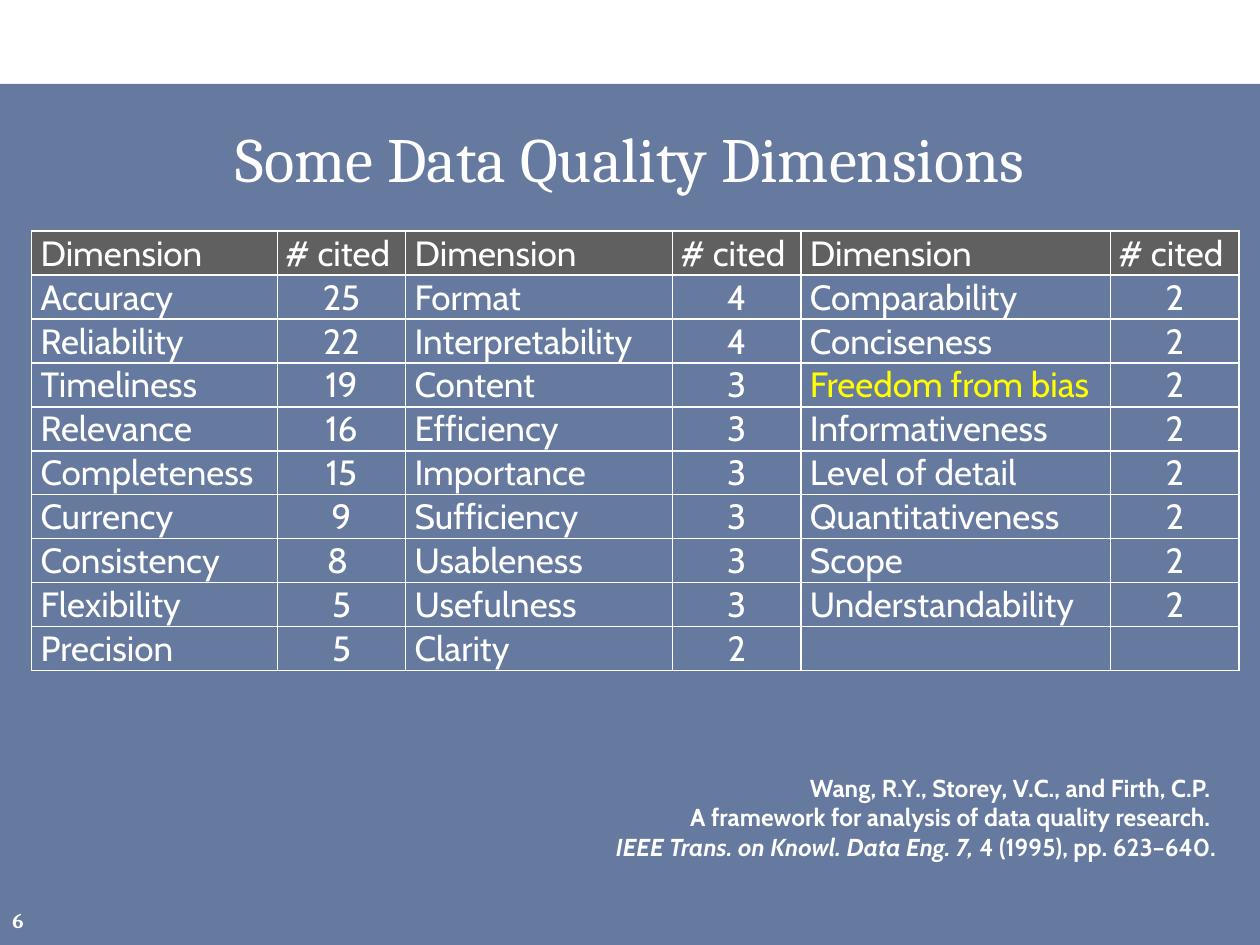
from lxml import etree
from pptx import Presentation
from pptx.dml.color import RGBColor
from pptx.enum import shapes, text
from pptx.oxml import ns
from pptx.util import Pt

COLORS = {"panel": "002060", "header": "606060", "text": "FFFFFF", "accent": "FFFF00"}
BODY, SERIF = "Cabin", "Cambria"

TITLE = "Some Data Quality Dimensions"
HEADINGS = ("Dimension", "# cited ")
HIGHLIGHT = "Freedom from bias"
GROUPS = [
    [("Accuracy", "25"), ("Reliability", "22"), ("Timeliness", "19"),
     ("Relevance", "16"), ("Completeness", "15"), ("Currency", "9"),
     ("Consistency", "8 "), ("Flexibility", "5"), ("Precision", "5")],
    [("Format", "4"), ("Interpretability", "4"), ("Content", "3"),
     ("Efficiency", "3"), ("Importance", "3"), ("Sufficiency", "3"),
     ("Usableness", "3"), ("Usefulness", "3"), ("Clarity", "2")],
    [("Comparability", "2"), ("Conciseness", "2"), (HIGHLIGHT, "2"),
     ("Informativeness", "2"), ("Level of detail", "2"), ("Quantitativeness", "2"),
     ("Scope", "2"), ("Understandability", "2"), ("", "")],
]
CITATION = [  # lines of (words, italic) runs
    [("Wang, R.Y., Storey, V.C., and Firth, C.P. ", False)],
    [("A framework for analysis of data quality research. ", False)],
    [("IEEE Trans. on Knowl. Data Eng. 7, ", True), ("4 (1995), pp. 623–640.", False)],
]
PAGE = "6"

CITED_WIDTH = 73.3
NAME_WIDTHS = (140.5, 152.6, 177.1)
ROW_HEIGHT = 25.14


def color(name):
    return RGBColor.from_string(COLORS[name])


def style(paragraph, face, size, align, bold=False, tint="text"):
    paragraph.alignment = align
    font = paragraph.font
    font.name, font.size, font.bold = face, Pt(size), bold
    font.color.rgb = color(tint)


def add_text(slide, box, lines, face, size, align, anchor, bold=False):
    frame = slide.shapes.add_textbox(*map(Pt, box)).text_frame
    frame.word_wrap = True
    frame.vertical_anchor = anchor
    for i, line in enumerate(lines):
        paragraph = frame.add_paragraph() if i else frame.paragraphs[0]
        style(paragraph, face, size, align, bold)
        for words, italic in line:
            run = paragraph.add_run()
            run.text = words
            if italic:
                run.font.italic = True


def add_borders(cell):
    props = cell._tc.get_or_add_tcPr()
    for i, side in enumerate(("lnL", "lnR", "lnT", "lnB")):
        line = etree.Element(ns.qn(f"a:{side}"), w=str(Pt(1)))
        fill = etree.SubElement(line, ns.qn("a:solidFill"))
        etree.SubElement(fill, ns.qn("a:srgbClr"), val=COLORS["text"])
        props.insert(i, line)


def fill_cell(cell, words, is_header, is_name):
    cell.margin_left = Pt(5.2 if is_name else 0.72)
    cell.margin_right = cell.margin_top = Pt(0.72)
    cell.margin_bottom = 0
    cell.vertical_anchor = text.MSO_ANCHOR.BOTTOM
    cell.text = words
    style(cell.text_frame.paragraphs[0], BODY, 20,
          text.PP_ALIGN.LEFT if is_name else text.PP_ALIGN.CENTER,
          tint="accent" if words == HIGHLIGHT else "text")
    if is_header:
        cell.fill.solid()
        cell.fill.fore_color.rgb = color("header")
    else:
        cell.fill.background()
    add_borders(cell)


def add_dimensions(slide):
    rows = [HEADINGS * len(GROUPS)] + [sum(pairs, ()) for pairs in zip(*GROUPS)]
    widths = [w for name_width in NAME_WIDTHS for w in (name_width, CITED_WIDTH)]
    table = slide.shapes.add_table(
        len(rows), len(widths), Pt(18), Pt(132),
        Pt(sum(widths)), Pt(ROW_HEIGHT * len(rows))).table
    table.horz_banding = False
    for column, width in zip(table.columns, widths):
        column.width = Pt(width)
    for r, row in enumerate(rows):
        table.rows[r].height = Pt(ROW_HEIGHT)
        for c, words in enumerate(row):
            fill_cell(table.cell(r, c), words, r == 0, c % 2 == 0)
    table.first_row = False


def add_panel(slide):
    panel = slide.shapes.add_shape(
        shapes.MSO_SHAPE.RECTANGLE, 0, Pt(48), Pt(720), Pt(492))
    panel.shadow.inherit = False
    panel.line.fill.background()
    panel.fill.solid()
    panel.fill.fore_color.rgb = color("panel")
    tint = panel._element.spPr.find(".//" + ns.qn("a:srgbClr"))
    etree.SubElement(tint, ns.qn("a:alpha"), val="60000")


def main():
    deck = Presentation()
    deck.slide_width, deck.slide_height = Pt(720), Pt(540)
    slide = deck.slides.add_slide(deck.slide_layouts[6])
    align, anchor = text.PP_ALIGN, text.MSO_ANCHOR
    add_panel(slide)
    add_text(slide, (18, 60, 684, 60), [[(TITLE, False)]],
             SERIF, 36, align.CENTER, anchor.MIDDLE)
    add_dimensions(slide)
    add_text(slide, (126, 438, 576, 58), CITATION,
             BODY, 14, align.RIGHT, anchor.TOP, bold=True)
    add_text(slide, (0, 511, 36, 29), [[(PAGE, False)]],
             SERIF, 12, align.LEFT, anchor.MIDDLE, bold=True)
    deck.save("out.pptx")


if __name__ == "__main__":
    main()
